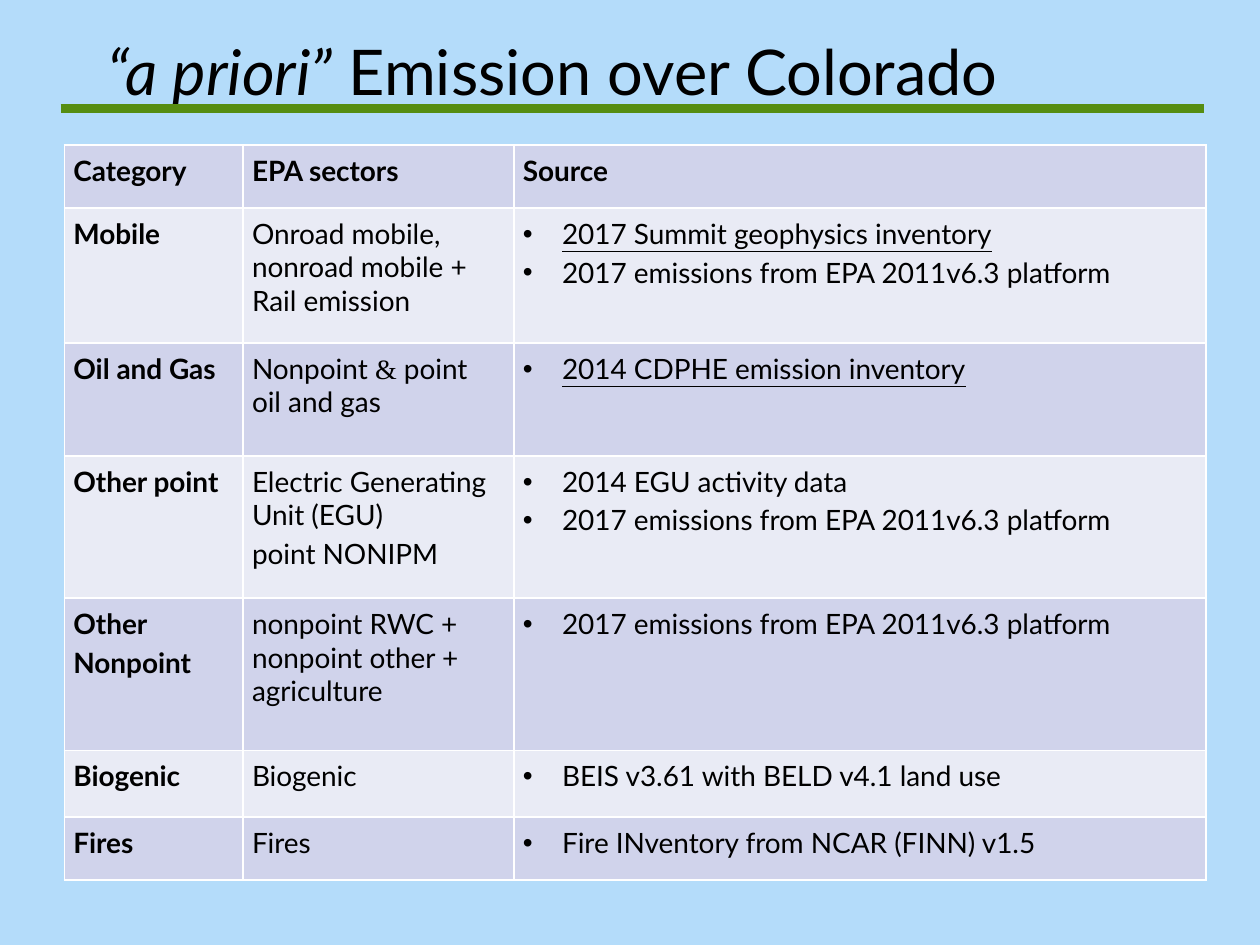
from dataclasses import dataclass

from lxml import etree
from pptx import Presentation
from pptx.dml.color import RGBColor
from pptx.enum import shapes, text
from pptx.oxml import ns
from pptx.util import Cm, Pt


@dataclass(frozen=True)
class Theme:
    font: str = "Lato"
    symbol_font: str = "Times New Roman"
    title_size: int = 36
    body_size: int = 16
    ink: str = "000000"
    background: str = "B4DCFA"
    rule: str = "568D11"
    border: str = "FFFFFF"
    bands: tuple = ("D0D3EB", "E9EBF5")


THEME = Theme()


@dataclass(frozen=True)
class Words:
    """A stretch of text with its own formatting."""
    content: str
    italic: bool = False
    underline: bool = False
    font: str = THEME.font


EPA_PLATFORM = "2017 emissions from EPA 2011v6.3 platform"
HEADINGS = ("Category", "EPA sectors", "Source")

# Each row: category, sectors and sources; every cell is a list of paragraphs
EMISSIONS = [
    (["Mobile"],
     ["Onroad mobile,\nnonroad mobile + \nRail emission"],
     [Words("2017 Summit geophysics inventory", underline=True), EPA_PLATFORM]),
    (["Oil and Gas"],
     [["Nonpoint ", Words("&", font=THEME.symbol_font), " point\noil and gas"]],
     [Words("2014 CDPHE emission inventory", underline=True)]),
    (["Other point"],
     ["Electric Generating Unit (EGU)", "point NONIPM"],
     ["2014 EGU activity data", EPA_PLATFORM]),
    (["Other", "Nonpoint"],
     ["nonpoint RWC + \nnonpoint other + \nagriculture"],
     [EPA_PLATFORM]),
    (["Biogenic"], ["Biogenic"], ["BEIS v3.61 with BELD v4.1 land use"]),
    (["Fires"], ["Fires"], ["Fire INventory from NCAR (FINN) v1.5"]),
]

COLUMN_WIDTHS = (3.6, 5.46, 13.95)
ROW_HEIGHTS = (1.27, 2.72, 2.28, 2.87, 3.07, 1.34, 1.27)


def rgb(value):
    return RGBColor.from_string(value)


def add_words(paragraph, words, size, bold=False):
    """Add one run per line, with line breaks between them."""
    if isinstance(words, str):
        words = Words(words)
    for number, line in enumerate(words.content.split("\n")):
        if number:
            paragraph.add_line_break()
        run = paragraph.add_run()
        run.text = line
        font = run.font
        font.name, font.size, font.bold = words.font, Pt(size), bold
        font.italic, font.underline = words.italic, words.underline
        font.color.rgb = rgb(THEME.ink)


def set_bullet(paragraph):
    properties = paragraph._p.get_or_add_pPr()
    indent = Cm(0.79)
    properties.set("marL", str(indent))
    properties.set("indent", str(-indent))
    etree.SubElement(properties, ns.qn("a:buFont"), typeface="Arial")
    etree.SubElement(properties, ns.qn("a:buChar"), char="•")


def set_borders(cell):
    properties = cell._tc.get_or_add_tcPr()
    for position, side in enumerate(("lnL", "lnR", "lnT", "lnB")):
        border = etree.Element(ns.qn(f"a:{side}"), w=str(Pt(1)))
        fill = etree.SubElement(border, ns.qn("a:solidFill"))
        etree.SubElement(fill, ns.qn("a:srgbClr"), val=THEME.border)
        properties.insert(position, border)


def fill_cell(cell, paragraphs, band, bold=False, bulleted=False):
    cell.fill.solid()
    cell.fill.fore_color.rgb = rgb(band)
    set_borders(cell)
    cell.margin_left = cell.margin_right = Cm(0.18)
    cell.margin_top = cell.margin_bottom = Cm(0.18)
    frame = cell.text_frame
    for number, parts in enumerate(paragraphs):
        paragraph = frame.add_paragraph() if number else frame.paragraphs[0]
        paragraph.space_before = Pt(3)
        if bulleted:
            set_bullet(paragraph)
        for words in parts if isinstance(parts, list) else [parts]:
            add_words(paragraph, words, THEME.body_size, bold)


def add_title(slide):
    title = slide.shapes.title
    title.left, title.top = Cm(1.91), Cm(0.48)
    title.width, title.height = Cm(21.59), Cm(1.7)
    frame = title.text_frame
    frame.word_wrap = True
    frame.auto_size = text.MSO_AUTO_SIZE.NONE
    frame.vertical_anchor = text.MSO_ANCHOR.BOTTOM
    frame.margin_bottom = Cm(0)
    heading = frame.paragraphs[0]
    heading.alignment = text.PP_ALIGN.LEFT
    heading.line_spacing = 1.0
    heading.space_before = Pt(0)
    for words in (Words("“a priori”", italic=True), " Emission over Colorado"):
        add_words(heading, words, THEME.title_size)


def add_title_rule(slide):
    height = Cm(2.18)
    rule = slide.shapes.add_connector(
        shapes.MSO_CONNECTOR.STRAIGHT, Cm(1.22), height, Cm(24.28), height)
    rule.line.color.rgb = rgb(THEME.rule)
    rule.line.width = Pt(5)
    etree.SubElement(rule._element.spPr, ns.qn("a:effectLst"))


def add_emission_table(slide):
    frame = slide.shapes.add_table(
        len(ROW_HEIGHTS), len(COLUMN_WIDTHS), Cm(1.3), Cm(2.92),
        Cm(sum(COLUMN_WIDTHS)), Cm(sum(ROW_HEIGHTS)))
    table = frame.table
    for column, width in zip(table.columns, COLUMN_WIDTHS):
        column.width = Cm(width)
    for row, height in zip(table.rows, ROW_HEIGHTS):
        row.height = Cm(height)

    # Heading row and category column are bold, sources are bulleted
    rows = [[[heading] for heading in HEADINGS], *EMISSIONS]
    for r, row in enumerate(rows):
        for c, paragraphs in enumerate(row):
            fill_cell(table.cell(r, c), paragraphs, THEME.bands[r % 2],
                      bold=r == 0 or c == 0, bulleted=r > 0 and c == 2)


def main():
    deck = Presentation()
    deck.slide_width, deck.slide_height = Cm(25.4), Cm(19.05)
    slide = deck.slides.add_slide(deck.slide_layouts[5])
    slide.background.fill.solid()
    slide.background.fill.fore_color.rgb = rgb(THEME.background)

    add_title(slide)
    add_title_rule(slide)
    add_emission_table(slide)
    deck.save("out.pptx")


if __name__ == "__main__":
    main()
